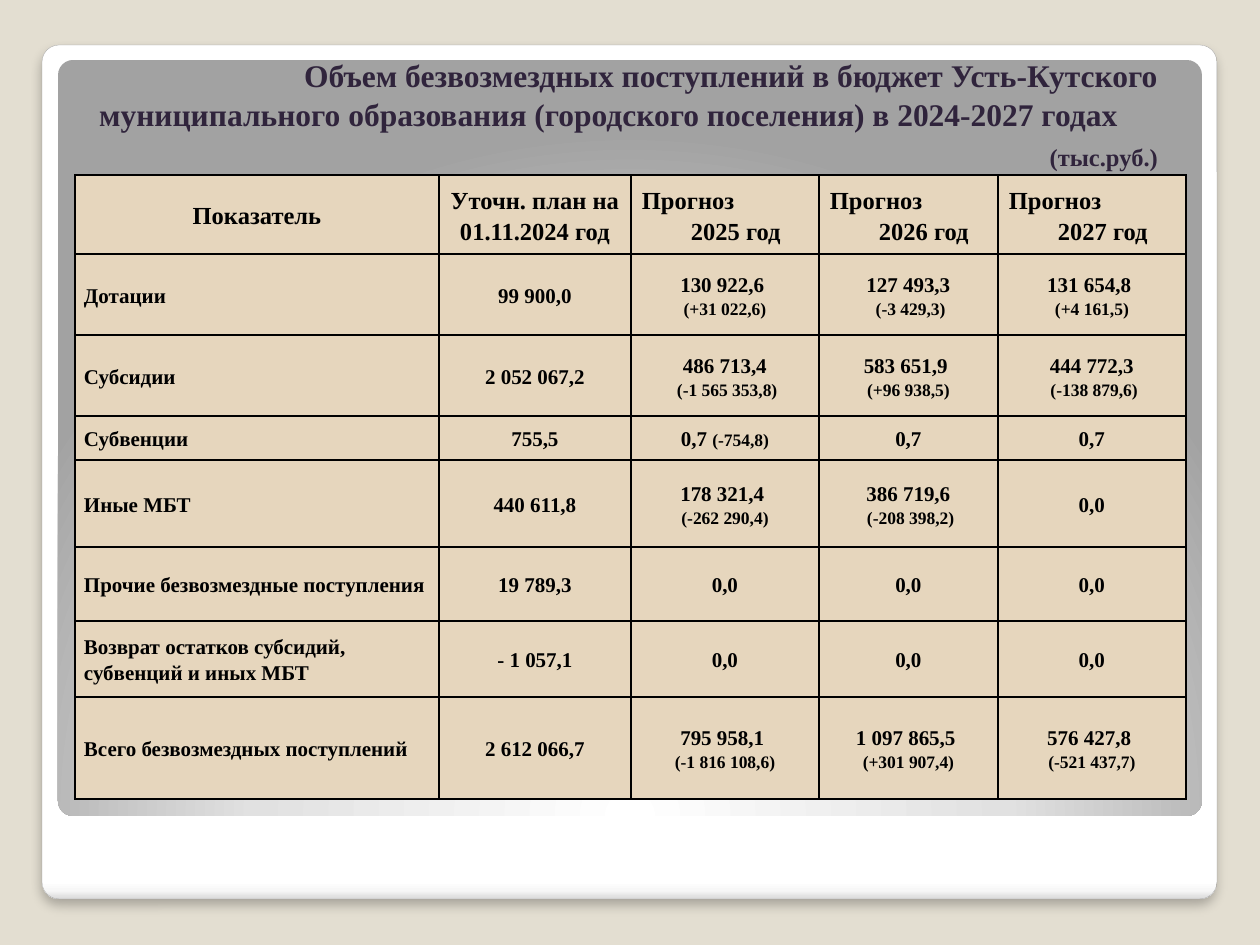
from pptx import Presentation
from pptx.dml.color import RGBColor
from pptx.enum.shapes import MSO_SHAPE
from pptx.enum.text import MSO_ANCHOR, PP_ALIGN
from pptx.oxml import parse_xml
from pptx.oxml.ns import nsdecls, qn
from pptx.util import Pt

PX = 914400 // 126
ROUNDED = MSO_SHAPE.ROUNDED_RECTANGLE
MIDDLE = MSO_ANCHOR.MIDDLE
LEFT, CENTER, RIGHT = PP_ALIGN.LEFT, PP_ALIGN.CENTER, PP_ALIGN.RIGHT

BACKGROUND = RGBColor(0xE3, 0xDE, 0xD1)
WHITE = RGBColor(0xFF, 0xFF, 0xFF)
PALE = RGBColor(0xF7, 0xF7, 0xF7)
EDGE = RGBColor(0xDA, 0xDA, 0xDA)
SILVER = RGBColor(0xE1, 0xE1, 0xE1)
GREY = RGBColor(0xA2, 0xA2, 0xA2)
OUTLINE = RGBColor(0xA4, 0xA4, 0xA4)
PLUM = RGBColor(0x30, 0x24, 0x3C)
BLACK = RGBColor(0, 0, 0)
SAND = RGBColor(0xE6, 0xD6, 0xBD)

LINEAR = '<a:lin ang="5400000" scaled="0"/>'
RADIAL = ('<a:path path="circle"><a:fillToRect l="50000" t="175000" '
          'r="50000" b="-75000"/></a:path>')

TITLE = [  # text, size, right margin
    ("Объем безвозмездных поступлений в бюджет Усть-Кутского", 18, 0),
    ("муниципального образования (городского поселения) в 2024-2027 годах", 18, 40),
    ("(тыс.руб.)", 14, 0),
]
COLUMNS = [364, 192, 188, 179, 188]
ROW_HEIGHTS = [79, 81, 81, 44, 87, 74, 76, 102]
HEADER = ["Показатель", "Уточн. план на 01.11.2024 год",
          "Прогноз\n2025 год", "Прогноз\n2026 год", "Прогноз\n2027 год"]
ROWS = [
    ["Дотации", "99 900,0", "130 922,6 \n(+31 022,6)",
     "127 493,3\n (-3 429,3)", "131 654,8 \n(+4 161,5)"],
    ["Субсидии", "2 052 067,2", "486 713,4\n (-1 565 353,8)",
     "583 651,9 \n(+96 938,5)", "444 772,3\n (-138 879,6)"],
    ["Субвенции", "755,5", "0,7 (-754,8)", "0,7", "0,7"],
    ["Иные МБТ", "440 611,8", "178 321,4 \n(-262 290,4)",
     "386 719,6\n (-208 398,2)", "0,0"],
    ["Прочие безвозмездные поступления", "19 789,3", "0,0", "0,0", "0,0"],
    ["Возврат остатков субсидий, субвенций и иных МБТ", "- 1 057,1",
     "0,0", "0,0", "0,0"],
    ["Всего безвозмездных поступлений", "2 612 066,7",
     "795 958,1 \n(-1 816 108,6)", "1 097 865,5 \n(+301 907,4)",
     "576 427,8 \n(-521 437,7)"],
]


class SlideBuilder:
    font = "Times New Roman"

    def __init__(self, slide):
        self.slide = slide
        slide.background.fill.solid()
        slide.background.fill.fore_color.rgb = BACKGROUND

    def panel(self, left, top, width, height, stops, direction):
        """Rounded rectangle with a gradient of (percent, colour) stops."""
        box = self.slide.shapes.add_shape(
            ROUNDED, left * PX, top * PX, width * PX, height * PX)
        box.adjustments[0] = 0.02
        box.shadow.inherit = False
        box.line.fill.background()
        box.fill.gradient()
        stop_xml = "".join(
            f'<a:gs pos="{percent * 1000}"><a:srgbClr val="{color}"/></a:gs>'
            for percent, color in stops)
        properties = box._element.spPr
        properties.replace(properties.find(qn("a:gradFill")), parse_xml(
            f'<a:gradFill {nsdecls("a")} rotWithShape="1">'
            f'<a:gsLst>{stop_xml}</a:gsLst>{direction}</a:gradFill>'))
        return box

    def drop_shadow(self, box):
        effects = box._element.spPr.find(qn("a:effectLst"))
        effects.append(parse_xml(
            f'<a:outerShdw {nsdecls("a")} blurRad="{Pt(6)}" dist="{Pt(4)}" '
            f'dir="5400000" algn="t" rotWithShape="0"><a:srgbClr val="{BLACK}">'
            '<a:alpha val="25000"/></a:srgbClr></a:outerShdw>'))

    def span(self, para, text, size, color):
        span = para.add_run()
        span.text = text
        span.font.name = self.font
        span.font.size = Pt(size)
        span.font.bold = True
        span.font.color.rgb = color

    def margin(self, para, side, width):
        para._p.get_or_add_pPr().set(f"mar{side}", str(width * PX))

    def title(self, left, top, width, height, lines):
        box = self.slide.shapes.add_textbox(
            left * PX, top * PX, width * PX, height * PX)
        frame = box.text_frame
        frame.word_wrap = True
        frame.vertical_anchor = MIDDLE
        frame.margin_left, frame.margin_right = 20 * PX, 13 * PX
        frame.margin_top, frame.margin_bottom = 13 * PX, 6 * PX
        for index, (text, size, margin) in enumerate(lines):
            para = frame.add_paragraph() if index else frame.paragraphs[0]
            para.alignment = RIGHT
            para.line_spacing = Pt(22)
            self.margin(para, "R", margin)
            self.span(para, text, size, PLUM)

    def borders(self, cell):
        properties = cell._tc.get_or_add_tcPr()
        for index, side in enumerate("LRTB"):
            properties.insert(index, parse_xml(
                f'<a:ln{side} {nsdecls("a")} w="{Pt(1)}"><a:solidFill>'
                f'<a:srgbClr val="{BLACK}"/></a:solidFill></a:ln{side}>'))

    def cell(self, cell, text, is_header, is_label):
        cell.fill.solid()
        cell.fill.fore_color.rgb = SAND
        self.borders(cell)
        cell.vertical_anchor = MIDDLE
        cell.margin_left = cell.margin_right = 9 * PX
        cell.margin_top = cell.margin_bottom = 0
        lines = text.split("\n")
        stepped = is_header and len(lines) > 1
        for index, line in enumerate(lines):
            para = cell.text_frame.add_paragraph() if index else cell.text_frame.paragraphs[0]
            para.line_spacing = 1.15
            para.alignment = LEFT if stepped or (is_label and not is_header) else CENTER
            if stepped:
                self.margin(para, "L", (2, 51)[index])
            if is_header:
                self.span(para, line, 14, BLACK)
                continue
            value, bracket, change = line.partition("(")
            if value.strip():
                self.span(para, value, 12, BLACK)
                value = ""
            if bracket:
                self.span(para, value + bracket + change, 10, BLACK)

    def table(self, left, top, columns, heights, rows):
        frame = self.slide.shapes.add_table(
            len(rows), len(columns), left * PX, top * PX,
            sum(columns) * PX, sum(heights) * PX)
        table = frame.table
        table.horz_banding = False
        for column, width in zip(table.columns, columns):
            column.width = width * PX
        for row, height in zip(table.rows, heights):
            row.height = height * PX
        for row_index, row in enumerate(rows):
            for column_index, text in enumerate(row):
                self.cell(table.cell(row_index, column_index), text,
                          row_index == 0, column_index == 0)


def main():
    deck = Presentation()
    deck.slide_width, deck.slide_height = 1260 * PX, 945 * PX
    page = SlideBuilder(deck.slides.add_slide(deck.slide_layouts[6]))
    card = page.panel(42, 45, 1175, 854,
                      [(0, WHITE), (98, WHITE), (99, PALE), (100, EDGE)], LINEAR)
    card.line.color.rgb = OUTLINE
    card.line.width = Pt(0.16)
    page.drop_shadow(card)
    page.panel(58, 60, 1144, 756, [(0, WHITE), (55, SILVER), (100, GREY)], RADIAL)
    page.title(74, 45, 1097, 130, TITLE)
    page.table(75, 175, COLUMNS, ROW_HEIGHTS, [HEADER] + ROWS)
    deck.save("out.pptx")


if __name__ == "__main__":
    main()
